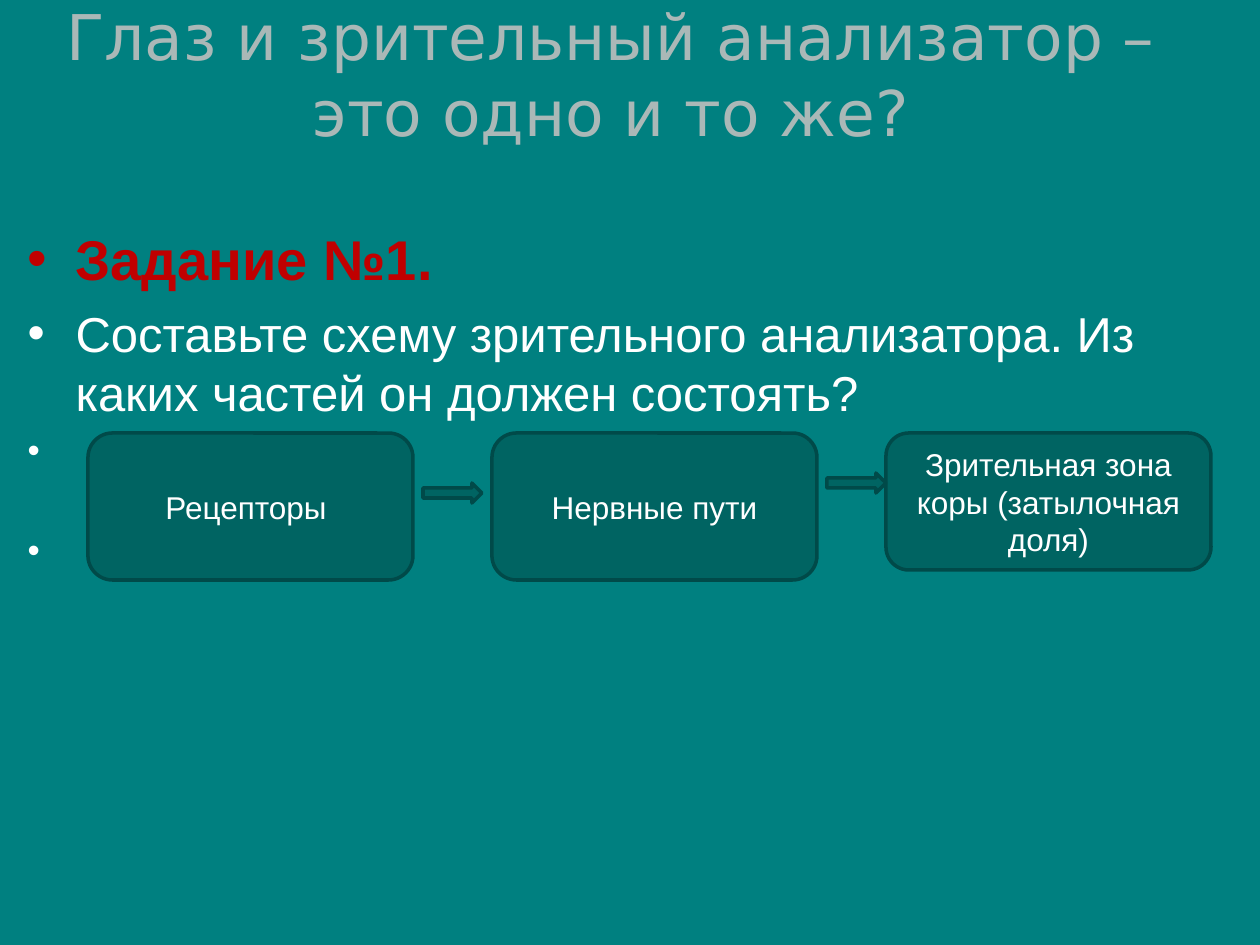
from lxml import etree
from pptx import Presentation
from pptx import util as u
from pptx.dml.color import RGBColor
from pptx.enum import shapes, text
from pptx.oxml.ns import qn

PX = u.Inches(1) / 126

TEAL = RGBColor(0x00, 0x80, 0x80)
DARK_TEAL = RGBColor(0x00, 0x64, 0x62)
OUTLINE = RGBColor(0x00, 0x4A, 0x49)
GREY = RGBColor(0xAA, 0xB8, 0xB7)
RED = RGBColor(0xC0, 0x00, 0x00)
WHITE = RGBColor(0xFF, 0xFF, 0xFF)

TITLE = "Глаз и зрительный анализатор – это одно и то же?"
BULLETS = [
    ("Задание №1.", dict(size=32, color=RED, bold=True)),
    ("Составьте схему зрительного анализатора. Из каких частей он должен состоять?",
     dict(size=28, before=7)),
    (" ", dict(size=20, before=5)),
    (" ", dict(size=20, before=33)),
]
STAGES = [
    ("Рецепторы ", 88, 147),
    ("Нервные пути", 492, 147),
    ("Зрительная зона коры (затылочная доля)", 886, 137),
]
ARROWS = [(423, 483), (827, 473)]
STAGE_TOP, STAGE_WIDTH = 433, 325
ARROW_SIZE = (59, 20)


def px(value):
    return u.Emu(round(value * PX))


def place(shape, left, top, width, height):
    shape.left, shape.top = px(left), px(top)
    shape.width, shape.height = px(width), px(height)


def write(paragraph, content, size=18, color=WHITE, font="Arial", bold=False,
          align=text.PP_ALIGN.CENTER, before=0, bullet_indent=0):
    paragraph.alignment = align
    paragraph.space_before = u.Pt(before)
    if bullet_indent:
        properties = paragraph._p.get_or_add_pPr()
        properties.set("marL", str(px(bullet_indent)))
        properties.set("indent", str(-px(bullet_indent)))
        etree.SubElement(properties, qn("a:buChar")).set("char", "•")
    run = paragraph.add_run()
    run.text = content
    run.font.size = u.Pt(size)
    run.font.name = font
    run.font.bold = bold
    run.font.color.rgb = color


def add_block(slide, kind, left, top, width, height):
    shape = slide.shapes.add_shape(kind, px(left), px(top), px(width), px(height))
    shape.shadow.inherit = False
    shape.fill.solid()
    shape.fill.fore_color.rgb = DARK_TEAL
    shape.line.color.rgb = OUTLINE
    shape.line.width = u.Pt(2)
    return shape


def main():
    presentation = Presentation()
    presentation.slide_width, presentation.slide_height = u.Inches(10), u.Inches(7.5)
    slide = presentation.slides.add_slide(presentation.slide_layouts[1])
    slide.background.fill.solid()
    slide.background.fill.fore_color.rgb = TEAL

    title, body = slide.placeholders
    place(title, 25, 0, 1172, 147)
    place(body, 15, 157, 1230, 761)
    for placeholder in (title, body):
        placeholder.text_frame.auto_size = text.MSO_AUTO_SIZE.NONE
    title.text_frame.vertical_anchor = text.MSO_ANCHOR.MIDDLE
    write(title.text_frame.paragraphs[0], TITLE, size=36, color=GREY, font="DejaVu Sans")

    frame = body.text_frame
    frame.margin_top = px(67)
    for index, (content, style) in enumerate(BULLETS):
        paragraph = frame.add_paragraph() if index else frame.paragraphs[0]
        write(paragraph, content, align=text.PP_ALIGN.LEFT, bullet_indent=48, **style)

    for label, left, height in STAGES:
        stage = add_block(slide, shapes.MSO_SHAPE.ROUNDED_RECTANGLE,
                          left, STAGE_TOP, STAGE_WIDTH, height)
        stage.text_frame.word_wrap = True
        stage.text_frame.vertical_anchor = text.MSO_ANCHOR.MIDDLE
        write(stage.text_frame.paragraphs[0], label)

    for left, top in ARROWS:
        add_block(slide, shapes.MSO_SHAPE.RIGHT_ARROW, left, top, *ARROW_SIZE)

    presentation.save("out.pptx")


if __name__ == "__main__":
    main()
